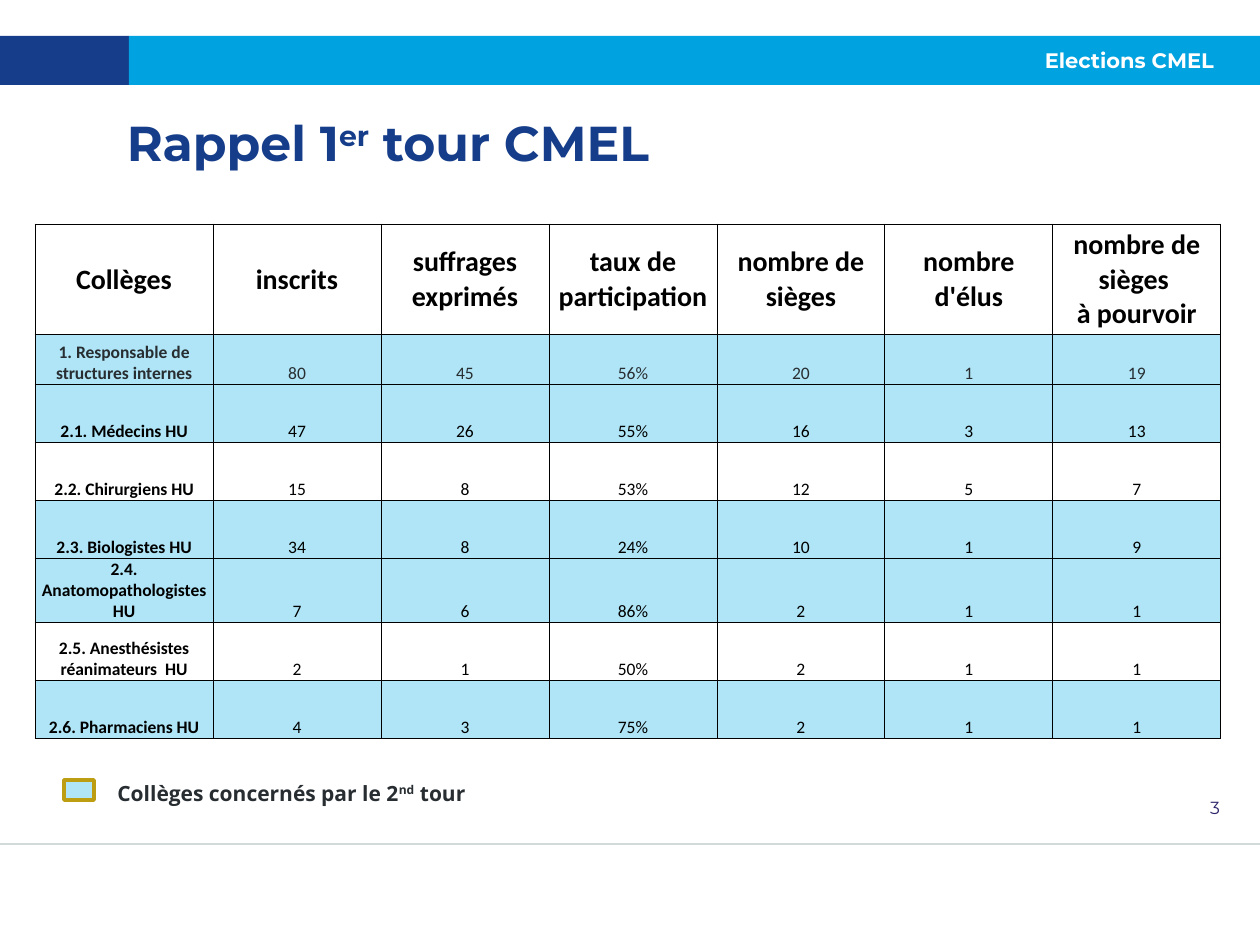
import pptx
import pptx.dml.color
import pptx.enum.shapes
import pptx.enum.text
import pptx.oxml
import pptx.oxml.ns
import pptx.util

ALIGN = pptx.enum.text.PP_ALIGN
ANCHOR = pptx.enum.text.MSO_ANCHOR
COLORS = {
    "navy": "153D8A", "blue": "00A2E0", "sky": "AFE5F6", "gold": "BD9D12",
    "rule": "D2D9DA", "indigo": "2C256B", "dark": "272D31",
    "white": "FFFFFF", "black": "000000",
}
HEADINGS = ["Collèges", "inscrits", "suffrages exprimés", "taux de participation",
            "nombre de sièges", "nombre d'élus", "nombre de sièges \nà pourvoir"]
# college, figures, concerned by the second round
COLLEGES = [
    ("1. Responsable de structures internes", "80 45 56% 20 1 19", True),
    ("2.1. Médecins HU", "47 26 55% 16 3 13", True),
    ("2.2. Chirurgiens HU", "15 8 53% 12 5 7", False),
    ("2.3. Biologistes HU", "34 8 24% 10 1 9", True),
    ("2.4. Anatomopathologistes HU", "7 6 86% 2 1 1", True),
    ("2.5. Anesthésistes réanimateurs  HU", "2 1 50% 2 1 1", False),
    ("2.6. Pharmaciens HU", "4 3 75% 2 1 1", True),
]


def px(length):
    return pptx.util.Emu(round(length * 914400 / 126))


def rgb(name):
    return pptx.dml.color.RGBColor.from_string(COLORS[name])


def apply(target, formats):
    for attribute, value in formats.items():
        setattr(target, attribute, value)


class SlideBuilder:
    def __init__(self, presentation):
        self.slide = presentation.slides.add_slide(presentation.slide_layouts[6])
        self.shapes = self.slide.shapes

    def style(self, paragraph, font, size, color, bold=False):
        for run in paragraph.runs:
            apply(run.font, {"name": font, "size": pptx.util.Pt(size), "bold": bold})
            run.font.color.rgb = rgb(color)

    def box(self, bounds, fill, line=None, width=0):
        rect = self.shapes.add_shape(
            pptx.enum.shapes.MSO_SHAPE.RECTANGLE, *map(px, bounds))
        rect.shadow.inherit = False
        rect.fill.solid()
        rect.fill.fore_color.rgb = rgb(fill)
        if line:
            rect.line.color.rgb = rgb(line)
            rect.line.width = pptx.util.Pt(width)
        else:
            rect.line.fill.background()

    def rule(self, start, end, color, width):
        line = self.shapes.add_connector(
            pptx.enum.shapes.MSO_CONNECTOR.STRAIGHT, *map(px, start + end))
        line.line.color.rgb = rgb(color)
        line.line.width = pptx.util.Pt(width)
        line._element.spPr.append(pptx.oxml.parse_xml(
            f'<a:effectLst {pptx.oxml.ns.nsdecls("a")}/>'))

    def text(self, bounds, pieces, look, frame_formats=None, paragraph_formats=None):
        """Write pieces as runs; every second piece is superscript."""
        frame = self.shapes.add_textbox(*map(px, bounds)).text_frame
        apply(frame, {"word_wrap": True, **(frame_formats or {})})
        paragraph = frame.paragraphs[0]
        apply(paragraph, paragraph_formats or {})
        for index, piece in enumerate(pieces):
            run = paragraph.add_run()
            run.text = piece
            if index % 2:
                run.font._element.set("baseline", "30000")
        self.style(paragraph, *look)

    def cell(self, cell, content, look, anchor, fill):
        apply(cell, {"margin_left": px(1), "margin_right": px(1), "margin_top": px(1),
                     "margin_bottom": 0, "vertical_anchor": anchor})
        paragraph = cell.text_frame.paragraphs[0]
        paragraph.text = content
        paragraph.alignment = ALIGN.CENTER
        self.style(paragraph, *look)
        properties = cell._tc.get_or_add_tcPr()
        for side in ("lnL", "lnR", "lnT", "lnB"):
            properties.append(pptx.oxml.parse_xml(
                f'<a:{side} {pptx.oxml.ns.nsdecls("a")} w="6350"><a:solidFill>'
                f'<a:srgbClr val="{COLORS["black"]}"/></a:solidFill></a:{side}>'))
        if fill:
            cell.fill.solid()
            cell.fill.fore_color.rgb = rgb(fill)
        else:
            cell.fill.background()

    def table(self, left, top, widths, heights):
        table = self.shapes.add_table(
            len(heights), len(widths), px(left), px(top),
            px(sum(widths)), px(sum(heights))).table
        apply(table, {"first_row": False, "horz_banding": False})
        for column, width in zip(table.columns, widths):
            column.width = px(width)
        for row, height in zip(table.rows, heights):
            row.height = px(height)
        return table

    def results(self, left, top, widths, heights):
        table = self.table(left, top, widths, heights)
        for column, heading in enumerate(HEADINGS):
            self.cell(table.cell(0, column), heading, ("Calibri", 16, "black", True),
                      ANCHOR.MIDDLE, None)
        for row, (college, figures, concerned) in enumerate(COLLEGES, 1):
            color = "dark" if row == 1 else "black"
            for column, value in enumerate([college, *figures.split()]):
                self.cell(table.cell(row, column), value,
                          ("Calibri", 10, color, column == 0),
                          ANCHOR.BOTTOM, "sky" if concerned else None)


def main():
    presentation = pptx.Presentation()
    apply(presentation, {"slide_width": px(1260), "slide_height": px(945)})
    page = SlideBuilder(presentation)
    flush = {"margin_left": 0, "margin_right": 0, "margin_top": 0, "margin_bottom": 0,
             "vertical_anchor": ANCHOR.MIDDLE}
    right = {"alignment": ALIGN.RIGHT}

    page.box((0, 36, 129, 49), "navy")
    page.box((129, 36, 1131, 49), "blue")
    page.rule((0, 844), (1260, 844), "rule", 0.75)
    page.text((1166, 785, 54, 44), ["3"], ("Montserrat", 10, "indigo"), flush, right)
    page.text((139, 36, 1081, 49), ["Elections CMEL "],
              ("Montserrat", 12, "white", True), flush, right)
    page.text((89, 96, 1131, 99), ["Rappel 1", "er", " tour CMEL"],
              ("Montserrat", 28, "navy", True),
              {**flush, "margin_left": px(38)}, {"line_spacing": 0.9})
    page.results(35, 224, [178] + [168] * 6, [110, 50] + [58] * 6)
    page.box((64, 780, 30, 20), "sky", "gold", 2)
    page.text((105, 774, 745, 38), ["Collèges concernés par le 2", "nd", " tour"],
              ("Open Sans", 12, "dark", True))
    presentation.save("out.pptx")


if __name__ == "__main__":
    main()
